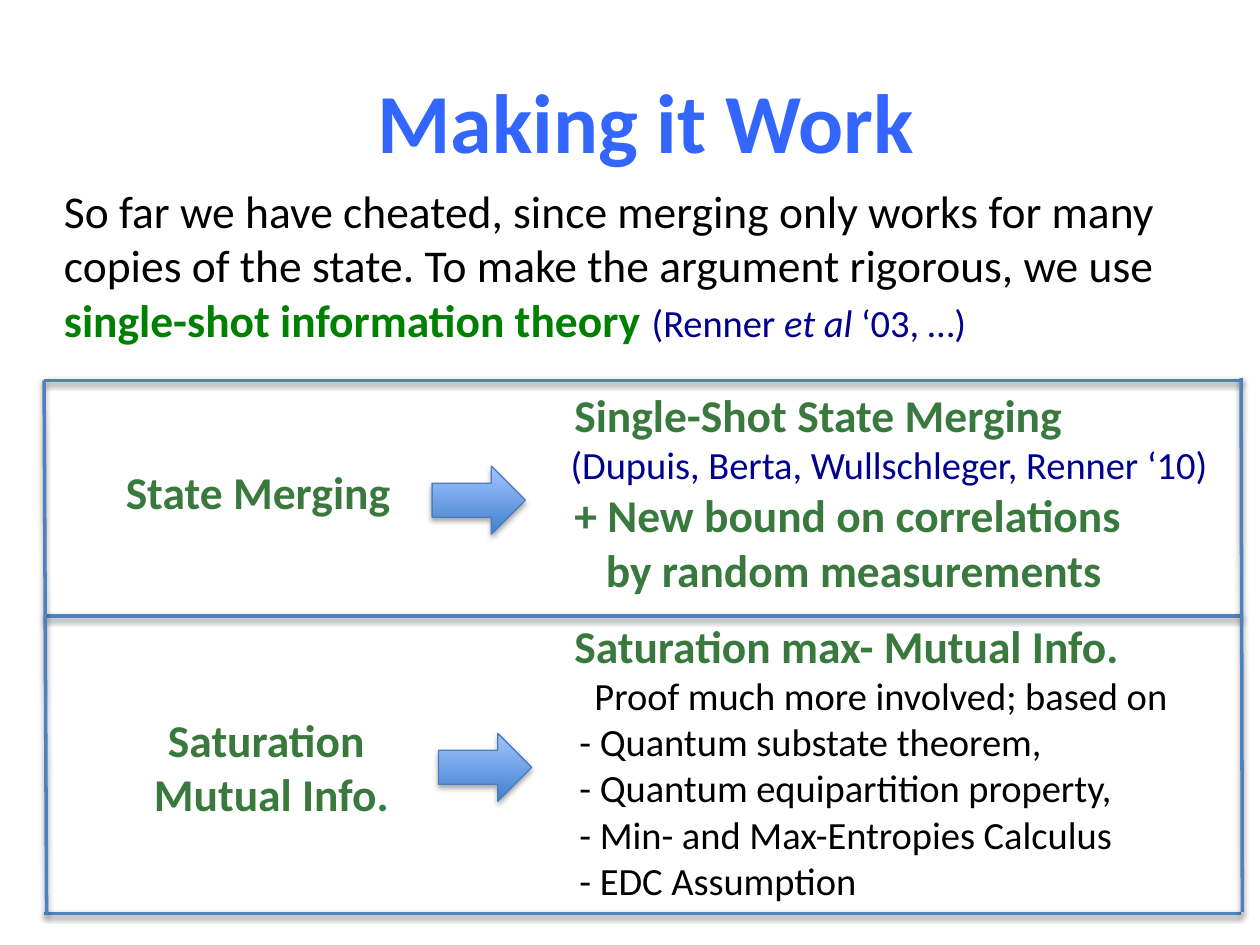
import pptx
import pptx.dml.color
import pptx.enum.shapes
import pptx.enum.text
import pptx.oxml
import pptx.oxml.ns
import pptx.util
from pptx.util import Inches

THEME = {
    "font": "Calibri",
    "title": 48, "body": 26, "detail": 22,
    "blue": "3366FF", "black": "000000", "green": "008000",
    "navy": "000090", "moss": "3A793E",
    "rule": "4F81BD", "arrow_edge": "4B7EBC", "arrow_fill": ("3F80CE", "A4C4FF"),
}

# Run styles: size, colour, bold, italic
STYLES = {
    "title": ("title", "blue", True, False),
    "intro": ("body", "black", False, False),
    "key": ("body", "green", True, False),
    "cite": ("detail", "navy", False, False),
    "cite_italic": ("detail", "navy", False, True),
    "heading": ("body", "moss", True, False),
    "detail": ("detail", "black", False, False),
}

# Paragraphs: left indent in inches, space before in points, runs
TITLE = [(0, 0, [("Making it Work", "title")])]
INTRO = [(0, 0, [
    ("So far we have cheated, since merging only works for many copies of the state. "
     "To make the argument rigorous, we use ", "intro"),
    ("single-shot information theory ", "key"),
    ("(Renner ", "cite"), ("et al ", "cite_italic"), ("‘03, …)", "cite"),
])]
RESULTS = [
    (0.24, 0, [("Single-Shot State Merging", "heading")]),
    (0.21, 0, [("(Dupuis, Berta, Wullschleger, Renner ‘10)", "cite")]),
    (0.24, 0, [("+ New bound on correlations", "heading")]),
    (0.49, 0, [("by random measurements", "heading")]),
    (0.24, 12, [("Saturation max- Mutual Info.", "heading")]),
    (0.4, 0, [("Proof much more involved; based on", "detail")]),
] + [(0.28, 0, [("- " + item, "detail")]) for item in (
    "Quantum substate theorem,", "Quantum equipartition property,",
    "Min- and Max-Entropies Calculus", "EDC Assumption")]
MERGING = [(0, 0, [("State Merging", "heading")])]
SATURATION = [(0, 0, [(line, "heading")]) for line in ("Saturation ", "Mutual Info.")]

# Text boxes: left, top, width, height, paragraphs, centred, anchored to the middle
TEXTS = [
    (0.17, 0, 9.91, 1.91, TITLE, True, True),
    (0.41, 1.4, 9.67, 1.41, INTRO, False, False),
    (4.22, 3.02, 5.86, 4.24, RESULTS, False, False),
    (0.9, 3.63, 2.9, 0.54, MERGING, False, False),
    (0.52, 5.6, 3.27, 0.98, SATURATION, True, False),
]

# Frame: horizontal rules, then the two sides
LEFT, RIGHT = 0.35, 9.85
RULES = [(LEFT, y, RIGHT, y) for y in (3.02, 4.89, 7.25)]
RULES += [(LEFT, 3.02, 0.37, 7.26), (RIGHT, 3, 9.86, 7.24)]

ARROWS = [(3.43, 3.7), (3.48, 5.82)]
ARROW_SIZE = (0.74, 0.54)


def colour(value):
    return pptx.dml.color.RGBColor.from_string(value)


def add_shadow(item, distance, opacity):
    item._element.spPr.append(pptx.oxml.parse_xml(
        f'<a:effectLst {pptx.oxml.ns.nsdecls("a")}>'
        f'<a:outerShdw blurRad="40000" dist="{distance}" dir="5400000" rotWithShape="0">'
        f'<a:srgbClr val="000000"><a:alpha val="{opacity * 1000}"/></a:srgbClr>'
        '</a:outerShdw></a:effectLst>'))


def add_text(page, left, top, width, height, paragraphs, centred, middle):
    box = page.shapes.add_textbox(*map(Inches, (left, top, width, height)))
    frame = box.text_frame
    frame.word_wrap = True
    anchors = pptx.enum.text.MSO_ANCHOR
    frame.vertical_anchor = anchors.MIDDLE if middle else anchors.TOP
    for index, (indent, gap, runs) in enumerate(paragraphs):
        para = frame.add_paragraph() if index else frame.paragraphs[0]
        aligns = pptx.enum.text.PP_ALIGN
        para.alignment = aligns.CENTER if centred else aligns.LEFT
        para.space_before = pptx.util.Pt(gap)
        if indent:
            properties = para._p.get_or_add_pPr()
            properties.set("marL", str(Inches(indent)))
            properties.set("indent", "0")
        for text, style in runs:
            size, ink, bold, italic = STYLES[style]
            span = para.add_run()
            span.text = text
            span.font.name = THEME["font"]
            span.font.size = pptx.util.Pt(THEME[size])
            span.font.color.rgb = colour(THEME[ink])
            span.font.bold, span.font.italic = bold, italic


def add_rule(page, ends):
    rule = page.shapes.add_connector(
        pptx.enum.shapes.MSO_CONNECTOR.STRAIGHT, *map(Inches, ends))
    rule.line.color.rgb = colour(THEME["rule"])
    rule.line.width = pptx.util.Pt(2)
    add_shadow(rule, 20000, 38)


def add_arrow(page, left, top):
    arrow = page.shapes.add_shape(
        pptx.enum.shapes.MSO_SHAPE.RIGHT_ARROW, *map(Inches, (left, top, *ARROW_SIZE)))
    arrow.fill.gradient()
    arrow.fill.gradient_angle = 90
    for stop, shade in zip(arrow.fill.gradient_stops, THEME["arrow_fill"]):
        stop.color.rgb = colour(shade)
    arrow.line.color.rgb = colour(THEME["arrow_edge"])
    arrow.line.width = pptx.util.Pt(0.75)
    add_shadow(arrow, 23000, 35)


def main():
    deck = pptx.Presentation()
    deck.slide_width, deck.slide_height = Inches(10), Inches(7.5)
    page = deck.slides.add_slide(deck.slide_layouts[6])
    for text in TEXTS:
        add_text(page, *text)
    for ends in RULES:
        add_rule(page, ends)
    for corner in ARROWS:
        add_arrow(page, *corner)
    deck.save("out.pptx")


if __name__ == "__main__":
    main()
